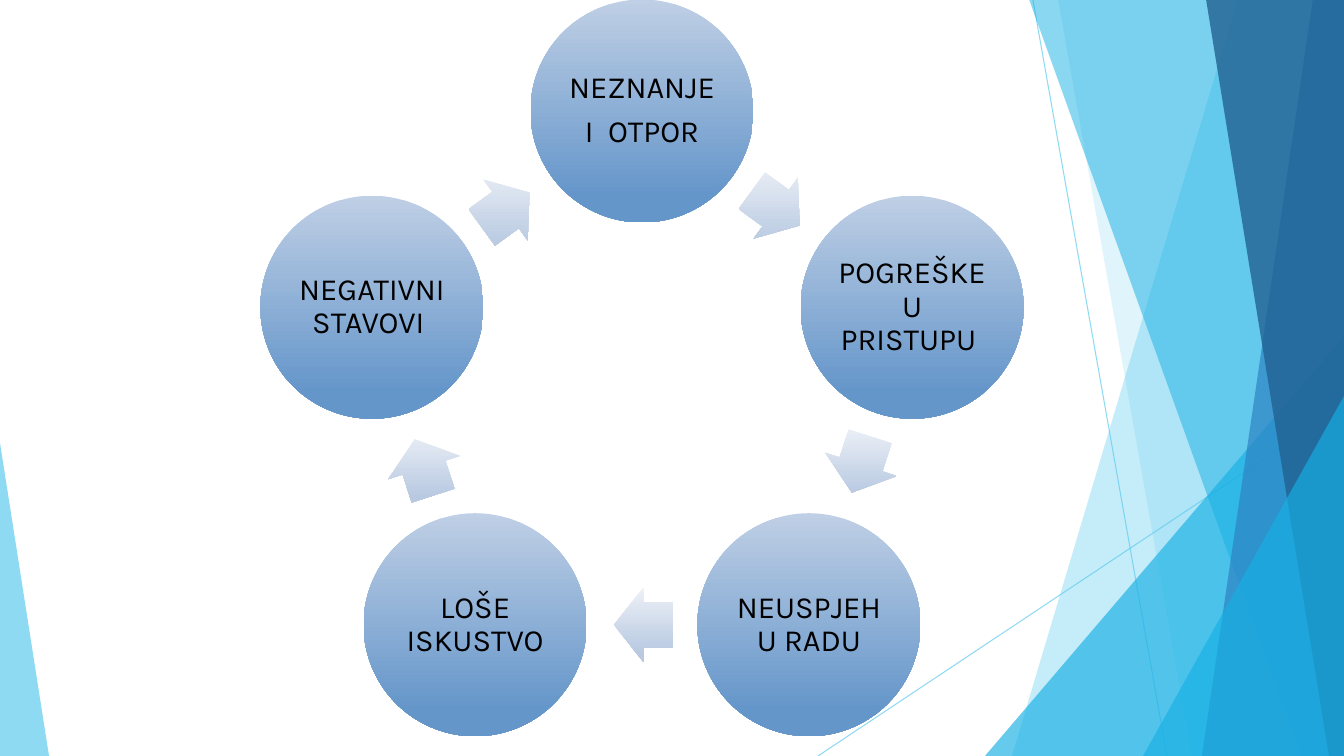
import math

import lxml.etree
import pptx
import pptx.dml.color
import pptx.enum.shapes
import pptx.enum.text
import pptx.oxml.ns
import pptx.util

RGBColor = pptx.dml.color.RGBColor
Shapes = pptx.enum.shapes.MSO_SHAPE

SKY = RGBColor(0x5F, 0xCB, 0xEF)
AZURE = RGBColor(0x17, 0xB0, 0xE4)
BLUE = RGBColor(0x2E, 0x83, 0xC3)
NAVY = RGBColor(0x22, 0x62, 0x92)
BLACK = RGBColor(0x00, 0x00, 0x00)
CIRCLE_COLORS = RGBColor(0xBF, 0xCF, 0xE5), RGBColor(0x65, 0x96, 0xCA)
ARROW_COLORS = RGBColor(0xED, 0xF1, 0xF7), RGBColor(0xB8, 0xC9, 0xE1)

WIDTH, HEIGHT = 1344, 756
SCALE = 12192000 / WIDTH


def px(*lengths):
    return [pptx.util.Emu(round(length * SCALE)) for length in lengths]


def write_text(text_frame, text, font="Karla", size=22, color=BLACK, inset=3,
               line_spacing=0.9, space_after=7.7):
    text_frame.text = text
    text_frame.word_wrap = True
    text_frame.vertical_anchor = pptx.enum.text.MSO_ANCHOR.MIDDLE
    margin = px(inset)[0]
    text_frame.margin_left = text_frame.margin_right = margin
    text_frame.margin_top = text_frame.margin_bottom = margin
    for paragraph in text_frame.paragraphs:
        paragraph.alignment = pptx.enum.text.PP_ALIGN.CENTER
        paragraph.line_spacing = line_spacing
        paragraph.space_after = pptx.util.Pt(space_after)
        paragraph.font.name = font
        paragraph.font.size = pptx.util.Pt(size)
        paragraph.font.color.rgb = color


presentation = pptx.Presentation()
presentation.slide_width, presentation.slide_height = px(WIDTH, HEIGHT)
slide = presentation.slides.add_slide(presentation.slide_layouts[6])
shapes = slide.shapes
translucent = []

for ends in [(1033, 0, 1167, 756), (1344, 406, 818, 756)]:
    line = shapes.add_connector(pptx.enum.shapes.MSO_CONNECTOR.STRAIGHT, *px(*ends))
    line.line.color.rgb = SKY
    line.line.width = pptx.util.Pt(0.75)
    lxml.etree.SubElement(line._element.spPr, pptx.oxml.ns.qn("a:effectLst"))
    translucent.append((line, 70))

decorations = [
    ("band", (1238, 1012), SKY, 36),
    ("band", (1058, 1192), SKY, 20),
    ("triangle", (985, 336, 359, 1), AZURE, 66),
    ("band", (1029, 1301), AZURE, 50),
    ("band", (1313, 1202), BLUE, 70),
    ("band", (1206, 1329), NAVY, 80),
    ("triangle", (1143, 396, 201, 1), AZURE, 66),
    ("triangle", (0, 443, 49, 0), SKY, 70),
]
for kind, geometry, color, opacity in decorations:
    if kind == "band":
        top_x, bottom_x = geometry
        builder = shapes.build_freeform(top_x, -1, scale=SCALE)
        builder.add_line_segments([(WIDTH, -1), (WIDTH, HEIGHT), (bottom_x, HEIGHT)])
        shape = builder.convert_to_shape()
    else:
        left, top, width, apex = geometry
        shape = shapes.add_shape(Shapes.ISOSCELES_TRIANGLE,
                                 *px(left, top, width, HEIGHT - top))
        shape.adjustments[0] = apex
    shape.shadow.inherit = False
    shape.fill.solid()
    shape.fill.fore_color.rgb = color
    shape.line.fill.background()
    translucent.append((shape, opacity))

for shape, opacity in translucent:
    color_element = shape._element.spPr.xpath(".//a:srgbClr")[0]
    alpha = lxml.etree.SubElement(color_element, pptx.oxml.ns.qn("a:alpha"))
    alpha.set("val", str(opacity * 1000))

CENTER_X, CENTER_Y, RING_RADIUS = 642, 395, 284
DIAMETER = 223
ARROW_LENGTH, ARROW_WIDTH = 59, 75
ARROW_RADIUS = RING_RADIUS * math.cos(math.pi / 5)
ARROW_SETBACK = 1.6

stages = [
    "NEZNANJE\nI  OTPOR",
    "POGREŠKE U PRISTUPU ",
    "NEUSPJEH U RADU",
    "LOŠE ISKUSTVO",
    "NEGATIVNI STAVOVI ",
]
step = 360 / len(stages)
for index, stage in enumerate(stages):
    angle = math.radians(index * step)
    circle_x = CENTER_X + RING_RADIUS * math.sin(angle)
    circle_y = CENTER_Y - RING_RADIUS * math.cos(angle)
    circle = shapes.add_shape(Shapes.OVAL, *px(
        circle_x - DIAMETER / 2, circle_y - DIAMETER / 2, DIAMETER, DIAMETER))
    write_text(circle.text_frame, stage)

    heading = (index + 0.5) * step
    turn = math.radians(heading)
    arrow_x = CENTER_X + ARROW_RADIUS * math.sin(turn) - ARROW_SETBACK * math.cos(turn)
    arrow_y = CENTER_Y - ARROW_RADIUS * math.cos(turn) - ARROW_SETBACK * math.sin(turn)
    arrow = shapes.add_shape(Shapes.RIGHT_ARROW, *px(
        arrow_x - ARROW_LENGTH / 2, arrow_y - ARROW_WIDTH / 2, ARROW_LENGTH, ARROW_WIDTH))
    arrow.adjustments[0] = 0.6
    arrow.adjustments[1] = 0.5
    arrow.rotation = heading

    for shape, colors in [(circle, CIRCLE_COLORS), (arrow, ARROW_COLORS)]:
        shape.shadow.inherit = False
        shape.line.fill.background()
        shape.fill.gradient()
        shape.fill.gradient_angle = 270
        for stop, color, position in zip(shape.fill.gradient_stops, colors, (0, 0.88)):
            stop.color.rgb = color
            stop.position = position
        shape._element.spPr.xpath("a:gradFill")[0].set("rotWithShape", "0")

presentation.save("out.pptx")
